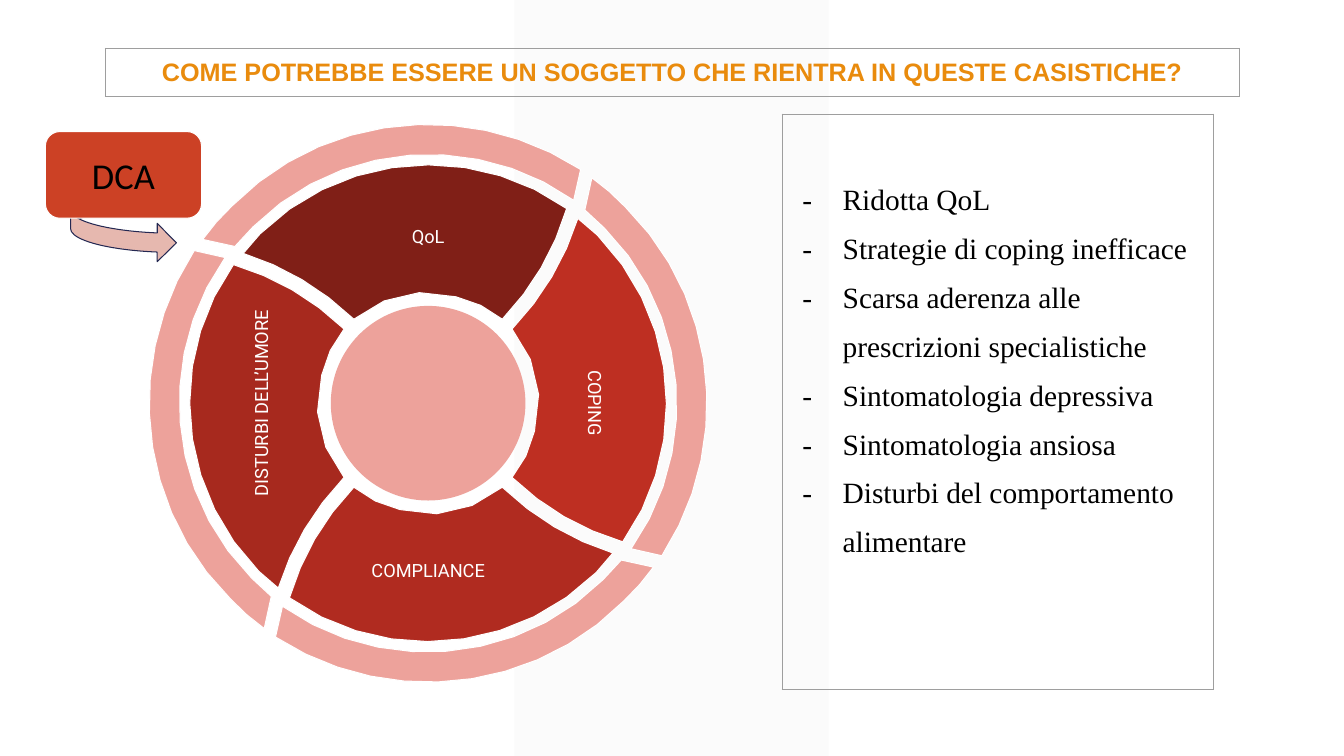
from math import ceil, cos, dist, radians, sin

from lxml import etree
from pptx import Presentation
from pptx.dml.color import RGBColor
from pptx.enum.shapes import MSO_SHAPE as SHAPE
from pptx.enum.text import MSO_ANCHOR as ANCHOR, PP_ALIGN as ALIGN
from pptx.oxml.ns import qn
from pptx.util import Pt

# Content
TITLE = "COME POTREBBE ESSERE UN SOGGETTO CHE RIENTRA IN QUESTE CASISTICHE?"
SIGNS = [
    "Ridotta QoL",
    "Strategie di coping inefficace",
    "Scarsa aderenza alle prescrizioni specialistiche",
    "Sintomatologia depressiva",
    "Sintomatologia ansiosa",
    "Disturbi del comportamento alimentare",
]
# Wheel sectors, counterclockwise from the left: label, fill, label angle
SECTORS = [
    ("DISTURBI DELL’UMORE", RGBColor(0xA7, 0x29, 0x1E), 270),
    ("COMPLIANCE", RGBColor(0xB0, 0x2B, 0x20), 0),
    ("COPING", RGBColor(0xBE, 0x2F, 0x22), 90),
    ("QoL", RGBColor(0x80, 0x1F, 0x17), 0),
]

WHITE = RGBColor(0xFF, 0xFF, 0xFF)
BLACK = RGBColor(0, 0, 0)
ORANGE = RGBColor(0xE9, 0x8B, 0x0D)
PINK = RGBColor(0xED, 0xA2, 0x9B)
BLUSH = RGBColor(0xE6, 0xB8, 0xAF)
BRICK = RGBColor(0xCC, 0x41, 0x25)
NAVY = RGBColor(0x24, 0x28, 0x52)
GREY = RGBColor(0x9E, 0x9E, 0x9E)
PALE = RGBColor(0xF2, 0xF2, 0xF2)

# Left sector as Bézier points around the wheel's centre, in points
CENTRE = (305.8, 288)
TILT = 315
RIM = [(-126, 125), (-188, 63), (-194, -35), (-145, -104),
       (-152, -106), (-159, -108), (-167, -109),
       (-217, -32), (-209, 73), (-141, 140),
       (-133, 148), (-126, 155), (-117, 161),
       (-116, 153), (-114, 145), (-112, 138),
       (-116, 134), (-121, 130), (-126, 125)]
WEDGE = [(-76, -20), (-73, -32), (-68, -44), (-60, -53),
         (-83, -75), (-109, -90), (-139, -99),
         (-186, -33), (-180, 60), (-121, 120),
         (-116, 125), (-112, 128), (-107, 132),
         (-98, 103), (-82, 76), (-60, 53),
         (-76, 34), (-84, 6), (-76, -20)]


def paint(shape, fill, line=None):
    shape.shadow.inherit = False
    shape.fill.solid()
    shape.fill.fore_color.rgb = fill
    if line is None:
        shape.line.fill.background()
    else:
        shape.line.color.rgb = line
        shape.line.width = Pt(0.75)


def style(par, face, size, color, bold=False, align=ALIGN.CENTER):
    par.alignment = align
    for run in par.runs:
        font = run.font
        font.name, font.size, font.bold = face, Pt(size), bold
        font.color.rgb = color


def write(shape, text, face, size, color, inset):
    frame = shape.text_frame
    frame.text = text
    frame.word_wrap = True
    frame.vertical_anchor = ANCHOR.MIDDLE
    frame.margin_left = frame.margin_right = Pt(inset)
    frame.margin_top = frame.margin_bottom = Pt(inset)
    style(frame.paragraphs[0], face, size, color)


def panel(shapes, box, text, head):
    """Add a one-cell table with a thin grey frame and return its cell."""
    table = shapes.add_table(1, 1, *map(Pt, box)).table
    table.first_row = table.horz_banding = False
    cell = table.cell(0, 0)
    cell.margin_left = cell.margin_right = cell.margin_bottom = Pt(7.2)
    cell.margin_top = Pt(head)
    cell.text_frame.text = text
    edges = cell._tc.get_or_add_tcPr()
    for side in ("a:lnL", "a:lnR", "a:lnT", "a:lnB"):
        edge = etree.SubElement(edges, qn(side), w=str(Pt(0.75)))
        solid = etree.SubElement(edge, qn("a:solidFill"))
        etree.SubElement(solid, qn("a:srgbClr"), val=str(GREY))
    cell.fill.background()
    return cell


def turn(point, angle):
    """Turn a point clockwise around the wheel's centre."""
    x, y = point
    c, s = cos(radians(angle)), sin(radians(angle))
    return x * c - y * s, x * s + y * c


def trace(knots):
    """Sample the chain of cubic curves, long ones more finely."""
    dots = [knots[0]]
    for i in range(0, len(knots) - 1, 3):
        a, b, c, d = knots[i:i + 4]
        steps = ceil(dist(a, d) / 25)
        for n in range(1, steps + 1):
            t = n / steps
            u = 1 - t
            dots.append(tuple(
                u**3 * a[k] + 3 * u * u * t * b[k] + 3 * u * t * t * c[k] + t**3 * d[k]
                for k in (0, 1)))
    return dots


def place(point, angle):
    x, y = turn(point, angle)
    return Pt(CENTRE[0] + x), Pt(CENTRE[1] + y)


def draw(shapes, knots, angle, fill):
    """Build the sector untilted, then tilt it about the wheel's centre."""
    dots = [place(dot, angle - TILT) for dot in trace(knots)]
    pen = shapes.build_freeform(*dots[0], scale=1.0)
    pen.add_line_segments(dots[1:-1], close=True)
    part = pen.convert_to_shape()
    paint(part, fill, WHITE)
    middle = ((part.left + part.width / 2) / Pt(1) - CENTRE[0],
              (part.top + part.height / 2) / Pt(1) - CENTRE[1])
    x, y = place(middle, TILT)
    part.left, part.top = x - part.width // 2, y - part.height // 2
    part.rotation = TILT


def main():
    deck = Presentation()
    deck.slide_width, deck.slide_height = Pt(960), Pt(540)
    slide = deck.slides.add_slide(deck.slide_layouts[6])
    shapes = slide.shapes

    # Pale band behind everything
    band = shapes.add_shape(SHAPE.RECTANGLE, Pt(367.5), 0, Pt(224.5), Pt(540))
    paint(band, PALE)
    tint = band.fill._xPr.find(qn("a:solidFill"))[0]
    etree.SubElement(tint, qn("a:alpha"), val="30000")

    # Framed list of signs
    cell = panel(shapes, (558.7, 81.5, 308.2, 411), "\n".join(SIGNS), 38.8)
    for par in cell.text_frame.paragraphs:
        style(par, "Times New Roman", 21, BLACK, align=ALIGN.LEFT)
        par.line_spacing = 1.5
        props = par._p.get_or_add_pPr()
        props.set("marL", str(Pt(36)))
        props.set("indent", str(Pt(-28.8)))
        etree.SubElement(props, qn("a:buFont"), typeface="Times New Roman")
        etree.SubElement(props, qn("a:buChar"), char="-")

    # Framed title
    cell = panel(shapes, (75.2, 34.5, 810, 30.3), TITLE, 7.2)
    style(cell.text_frame.paragraphs[0], "Arial", 18, ORANGE, bold=True)

    # Wheel: hub, then rim, wedge and label of each sector
    size = 139
    hub = shapes.add_shape(SHAPE.OVAL, Pt(CENTRE[0] - size / 2),
                           Pt(CENTRE[1] - size / 2), Pt(size), Pt(size))
    paint(hub, PINK)
    hub.rotation = TILT
    wide, high = Pt(157), Pt(59)
    for count, (text, fill, tilt) in enumerate(SECTORS):
        angle = -90 * count
        parts = shapes.add_group_shape().shapes
        draw(parts, RIM, angle, PINK)
        draw(parts, WEDGE, angle, fill)
        x, y = place((-119.5, 0), angle)
        label = parts.add_textbox(x - wide // 2, y - high // 2, wide, high)
        label.rotation = tilt
        write(label, text, "Roboto", 13, WHITE, 9.4)

    # DCA box and its arrow to the wheel
    arrow = shapes.add_shape(SHAPE.CURVED_RIGHT_ARROW, Pt(50.4), Pt(132.5),
                             Pt(75.6), Pt(54.7))
    paint(arrow, BLUSH, NAVY)
    box = shapes.add_shape(SHAPE.ROUNDED_RECTANGLE, Pt(32.4), Pt(94),
                           Pt(111.6), Pt(61.9))
    paint(box, BRICK, WHITE)
    write(box, "DCA", "Calibri", 26, BLACK, 7.2)

    deck.save("out.pptx")


if __name__ == "__main__":
    main()
